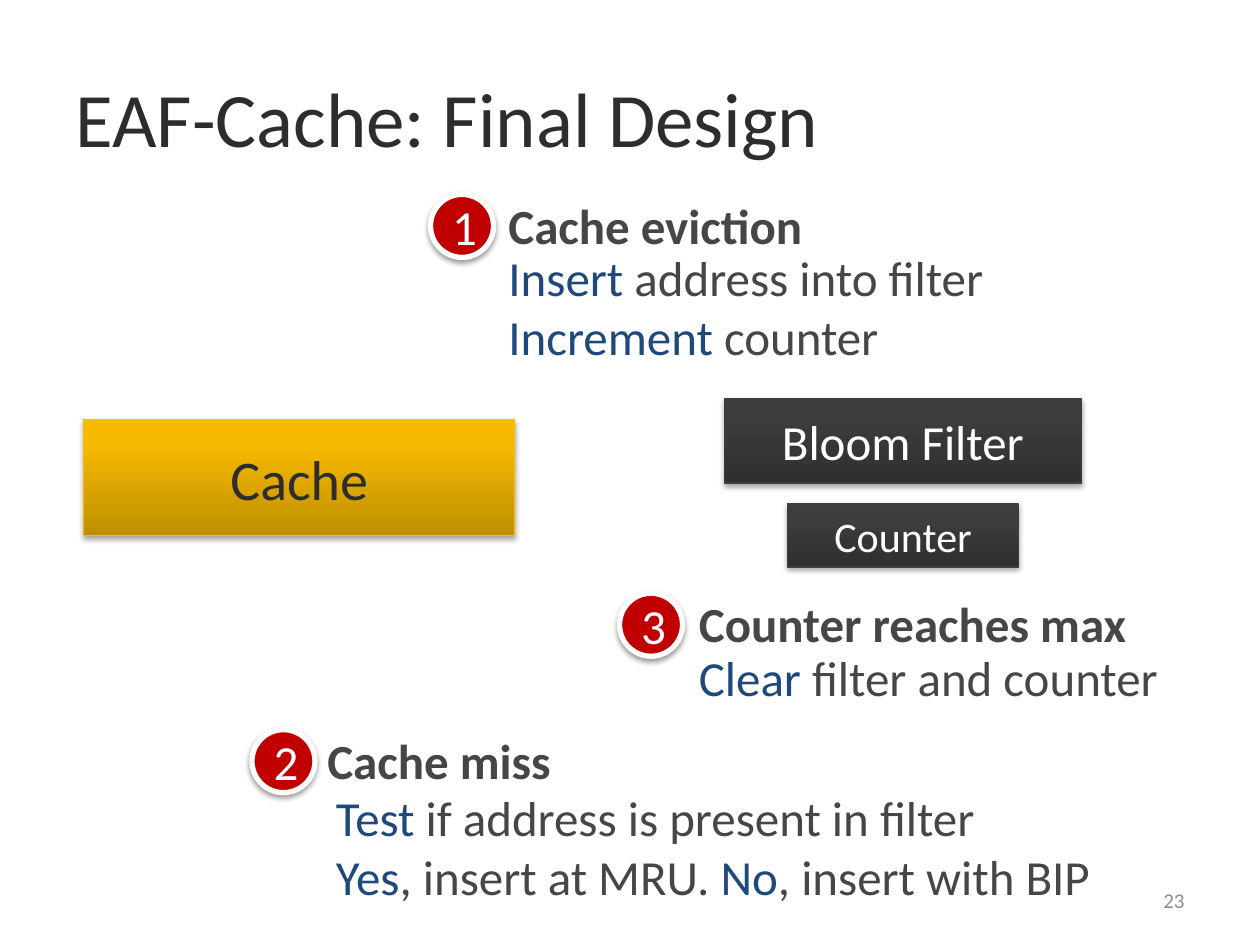
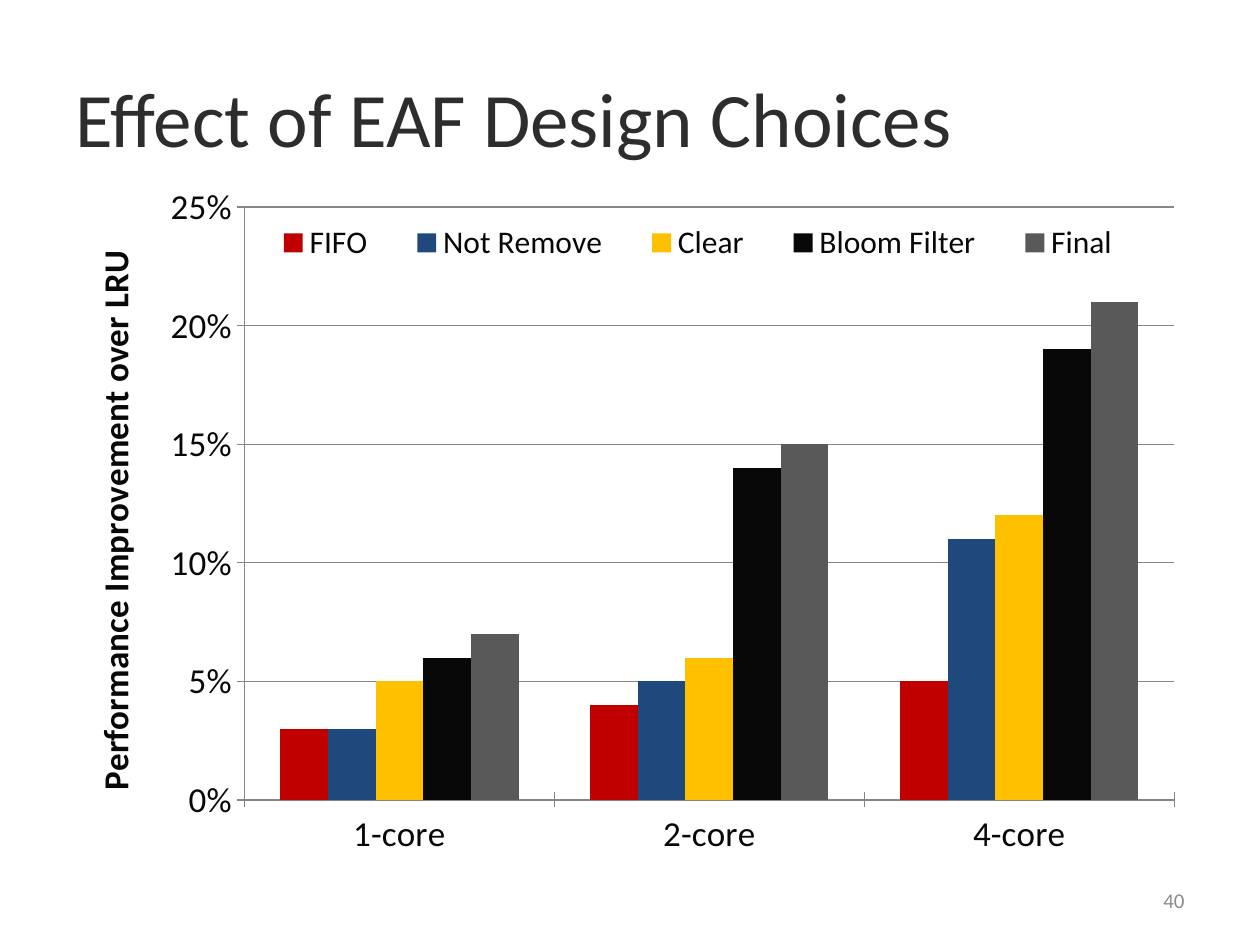
from dataclasses import dataclass

from lxml import etree
from pptx import Presentation
from pptx.chart.chart import Chart
from pptx.chart.data import CategoryChartData
from pptx.dml.color import RGBColor
from pptx.enum.chart import XL_CHART_TYPE, XL_LEGEND_POSITION, XL_TICK_MARK
from pptx.enum.shapes import MSO_SHAPE
from pptx.enum.text import MSO_ANCHOR, MSO_AUTO_SIZE, PP_ALIGN
from pptx.oxml.ns import qn
from pptx.shapes.autoshape import Shape
from pptx.slide import Slide
from pptx.text.text import TextFrame
from pptx.util import Cm, Pt

TITLE_ONLY = 5
RECTANGLE, OVAL = MSO_SHAPE.RECTANGLE, MSO_SHAPE.OVAL
LEFT, CENTER, RIGHT = PP_ALIGN.LEFT, PP_ALIGN.CENTER, PP_ALIGN.RIGHT
MIDDLE = MSO_ANCHOR.MIDDLE
COLUMNS = XL_CHART_TYPE.COLUMN_CLUSTERED
LEGEND_RIGHT = XL_LEGEND_POSITION.RIGHT
TICK_CROSS, TICK_NONE = XL_TICK_MARK.CROSS, XL_TICK_MARK.NONE


@dataclass(frozen=True)
class Theme:
    font: str = "Calibri"
    ink: str = "2D2D2D"
    body: str = "464646"
    accent: str = "1F497D"
    red: str = "C00000"
    white: str = "FFFFFF"
    number: str = "8C8C8C"
    chart_ink: str = "080808"
    yellow: str = "FFC000"
    grey: str = "595959"
    grid: str = "868686"
    gold_shades: tuple[str, str, str] = ("BE8F00", "F7BA00", "F9BC00")
    dark_shades: tuple[str, str, str] = ("2F2F2F", "3D3D3D", "3E3E3E")
    title_size: int = 44
    cache_size: int = 32
    step_size: int = 28
    counter_size: int = 24
    axis_size: int = 20
    legend_size: int = 18
    number_size: int = 12


THEME = Theme()


@dataclass(frozen=True)
class Area:
    left: float
    top: float
    width: float
    height: float

    def lengths(self) -> tuple[Cm, Cm, Cm, Cm]:
        return Cm(self.left), Cm(self.top), Cm(self.width), Cm(self.height)


@dataclass(frozen=True)
class Block:
    """A shaded hardware block; shades are bottom, top and outline."""
    label: str
    area: Area
    size: int
    color: str
    shades: tuple[str, str, str]


@dataclass(frozen=True)
class Step:
    """A numbered event; words between asterisks in the detail are accented."""
    number: int
    badge_left: float
    badge_top: float
    heading: str
    heading_left: float
    heading_width: float
    detail: str
    detail_left: float
    detail_top: float
    detail_width: float


@dataclass(frozen=True)
class Series:
    name: str
    values: tuple[int, ...]
    color: str


TITLE_AREA = Area(1.27, 0.76, 22.86, 3.18)
NUMBER_AREA = Area(18.2, 17.65, 5.93, 1.01)
CHART_AREA = Area(1.27, 3.6, 22.86, 14.4)
BADGE_SIDE = 1.27
LINE_HEIGHT = 1.2

BLOCKS = (
    Block("Cache", Area(1.69, 8.47, 8.69, 2.33), THEME.cache_size, THEME.ink, THEME.gold_shades),
    Block("Bloom Filter", Area(14.6, 8.04, 7.2, 1.7), THEME.step_size, THEME.white,
          THEME.dark_shades),
    Block("Counter", Area(15.88, 10.16, 4.65, 1.27), THEME.counter_size, THEME.white,
          THEME.dark_shades),
)
STEPS = (
    Step(1, 8.68, 3.92, "Cache eviction", 10, 6.5,
         "*Insert* address into filter\n*Increment* counter", 10, 4.87, 10.19),
    Step(2, 5.08, 14.71, "Cache miss", 6.35, 5.08,
         "*Test* if address is present in filter\n"
         "*Yes*, insert at MRU.* No*, insert with BIP", 6.52, 15.75, 15.88),
    Step(3, 12.49, 11.96, "Counter reaches max", 13.84, 9.25,
         "*Clear* filter and counter", 13.84, 12.92, 9.86),
)
CORES = ("1-core", "2-core", "4-core")
SERIES = (
    Series("FIFO", (3, 4, 5), THEME.red),
    Series("Not Remove", (3, 5, 11), THEME.accent),
    Series("Clear", (5, 6, 12), THEME.yellow),
    Series("Bloom Filter", (6, 14, 19), THEME.chart_ink),
    Series("Final", (7, 15, 21), THEME.grey),
)


def rgb(color: str) -> RGBColor:
    return RGBColor.from_string(color)


def write_text(frame: TextFrame, text: str, *, size: int, color: str, accent: str = THEME.accent,
               bold: bool = False, align: PP_ALIGN = LEFT) -> None:
    """Write one paragraph per line, accenting the words between asterisks."""
    for index, line in enumerate(text.split("\n")):
        para = frame.paragraphs[0] if index == 0 else frame.add_paragraph()
        para.alignment = align
        for position, part in enumerate(line.split("*")):
            if not part:
                continue
            span = para.add_run()
            span.text = part
            span.font.name = THEME.font
            span.font.size = Pt(size)
            span.font.bold = bold
            span.font.color.rgb = rgb(accent if position % 2 else color)


def add_label(page: Slide, area: Area, text: str, *, bold: bool = False) -> None:
    frame = page.shapes.add_textbox(*area.lengths()).text_frame
    frame.word_wrap = False
    frame.auto_size = MSO_AUTO_SIZE.SHAPE_TO_FIT_TEXT
    write_text(frame, text, size=THEME.step_size, color=THEME.body, bold=bold)


def add_page(deck: Presentation, title: str, number: int) -> Slide:
    page = deck.slides.add_slide(deck.slide_layouts[TITLE_ONLY])
    heading = page.shapes.title
    heading.left, heading.top, heading.width, heading.height = TITLE_AREA.lengths()
    heading.text_frame.vertical_anchor = MIDDLE
    write_text(heading.text_frame, title, size=THEME.title_size, color=THEME.ink)
    frame = page.shapes.add_textbox(*NUMBER_AREA.lengths()).text_frame
    frame.word_wrap = True
    frame.vertical_anchor = MIDDLE
    write_text(frame, str(number), size=THEME.number_size, color=THEME.number, align=RIGHT)
    return page


def drop_shadow(shape: Shape, opacity: int) -> None:
    shape.shadow.inherit = False
    effects = shape.element.spPr.find(qn("a:effectLst"))
    shadow = etree.SubElement(effects, qn("a:outerShdw"), blurRad=str(Pt(3.1)),
                              dist=str(Pt(1.7)), dir="5400000", rotWithShape="0")
    color = etree.SubElement(shadow, qn("a:srgbClr"), val="000000")
    etree.SubElement(color, qn("a:alpha"), val=str(opacity * 1000))


def add_block(page: Slide, block: Block) -> None:
    box = page.shapes.add_shape(RECTANGLE, *block.area.lengths())
    bottom, top, outline = block.shades
    box.fill.gradient()
    box.fill.gradient_angle = 90
    for stop, color, position in zip(box.fill.gradient_stops, (bottom, top), (0, 0.8)):
        stop.color.rgb = rgb(color)
        stop.position = position
    box.line.color.rgb = rgb(outline)
    box.line.width = Pt(0.75)
    drop_shadow(box, 35)
    box.text_frame.vertical_anchor = MIDDLE
    write_text(box.text_frame, block.label, size=block.size, color=block.color, align=CENTER)


def add_step(page: Slide, step: Step) -> None:
    badge_area = Area(step.badge_left, step.badge_top, BADGE_SIDE, BADGE_SIDE)
    badge = page.shapes.add_shape(OVAL, *badge_area.lengths())
    badge.fill.solid()
    badge.fill.fore_color.rgb = rgb(THEME.red)
    badge.line.color.rgb = rgb(THEME.white)
    badge.line.width = Pt(3)
    drop_shadow(badge, 38)
    badge.text_frame.vertical_anchor = MIDDLE
    write_text(badge.text_frame, str(step.number), size=THEME.step_size, color=THEME.white,
               align=CENTER)
    add_label(page, Area(step.heading_left, step.badge_top - 0.11, step.heading_width, 1.45),
              step.heading, bold=True)
    height = 0.25 + LINE_HEIGHT * len(step.detail.split("\n"))
    add_label(page, Area(step.detail_left, step.detail_top, step.detail_width, height),
              step.detail)


def set_chart_layout(chart: Chart, tag: str, index: int, inner: bool = False,
                     **fractions: float) -> None:
    """Place a chart part by fractions of the chart area."""
    part = chart.element.find(f".//{qn(tag)}")
    for old in part.findall(qn("c:layout")):
        part.remove(old)
    layout = etree.Element(qn("c:layout"))
    part.insert(index, layout)
    manual = etree.SubElement(layout, qn("c:manualLayout"))
    if inner:
        etree.SubElement(manual, qn("c:layoutTarget"), val="inner")
    for mode in ("xMode", "yMode"):
        etree.SubElement(manual, qn(f"c:{mode}"), val="edge")
    for name, fraction in fractions.items():
        etree.SubElement(manual, qn(f"c:{name}"), val=str(fraction))


def add_improvement_chart(page: Slide) -> None:
    data = CategoryChartData()
    data.categories = CORES
    for series in SERIES:
        data.add_series(series.name, series.values)
    chart = page.shapes.add_chart(COLUMNS, *CHART_AREA.lengths(), data).chart
    chart.has_title = False
    chart.font.name = THEME.font
    chart.font.size = Pt(THEME.axis_size)
    chart.font.color.rgb = rgb(THEME.chart_ink)

    plot = chart.plots[0]
    plot.gap_width, plot.overlap = 150, 0
    plot.vary_by_categories = False
    for bars, series in zip(plot.series, SERIES):
        bars.format.fill.solid()
        bars.format.fill.fore_color.rgb = rgb(series.color)

    values = chart.value_axis
    values.minimum_scale, values.maximum_scale, values.major_unit = 0, 25, 5
    values.tick_labels.number_format = r"#,##0\%"
    values.tick_labels.number_format_is_linked = False
    values.has_major_gridlines = True
    write_text(values.axis_title.text_frame, "Performance Improvement over LRU",
               size=THEME.axis_size, color=THEME.chart_ink, bold=True, align=CENTER)
    for axis in (chart.category_axis, values):
        axis.major_tick_mark, axis.minor_tick_mark = TICK_CROSS, TICK_NONE
        axis.tick_labels.font.size = Pt(THEME.axis_size)
    for ruled in (chart.category_axis, values, values.major_gridlines):
        ruled.format.line.color.rgb = rgb(THEME.grid)
        ruled.format.line.width = Pt(0.75)

    chart.has_legend = True
    chart.legend.position = LEGEND_RIGHT
    chart.legend.include_in_layout = False
    chart.legend.font.size = Pt(THEME.legend_size)
    set_chart_layout(chart, "c:legend", 1, x=0.16, y=0.05, w=0.8, h=0.08)
    set_chart_layout(chart, "c:plotArea", 0, inner=True, x=0.16, y=0.04, w=0.82, h=0.83)


def main() -> None:
    deck = Presentation()
    deck.slide_width, deck.slide_height = Cm(25.4), Cm(19.05)
    design = add_page(deck, "EAF-Cache: Final Design", 23)
    for block in BLOCKS:
        add_block(design, block)
    for step in STEPS:
        add_step(design, step)
    add_improvement_chart(add_page(deck, "Effect of EAF Design Choices", 40))
    deck.save("out.pptx")


if __name__ == "__main__":
    main()
